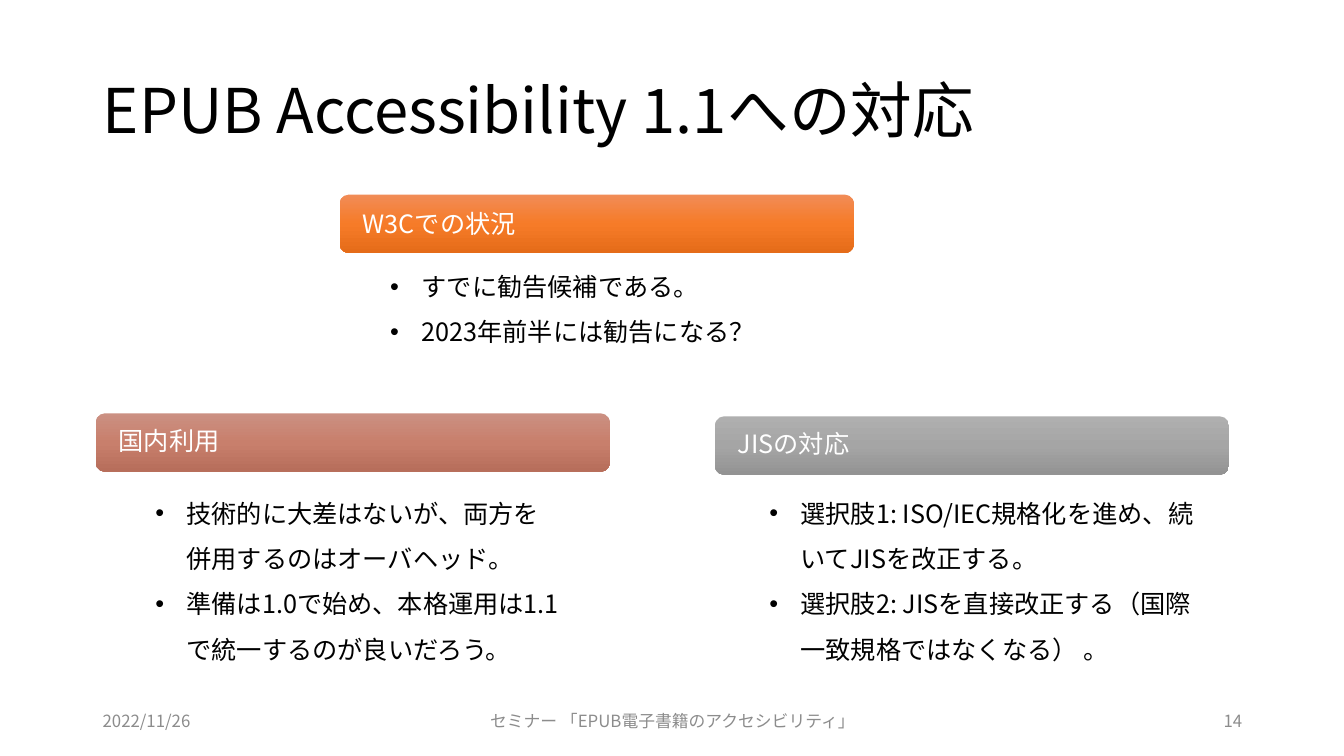
from copy import deepcopy

from lxml import etree
from pptx import Presentation
from pptx.dml.color import RGBColor
from pptx.enum import shapes, text
from pptx.oxml.ns import qn
from pptx.util import Inches, Pt

FACE = "Noto Sans CJK JP"
BLACK = RGBColor(0x00, 0x00, 0x00)
WHITE = RGBColor(0xFF, 0xFF, 0xFF)
GRAY = RGBColor(0x8C, 0x8C, 0x8C)
ORANGE = [RGBColor(0xF1, 0x8C, 0x57), RGBColor(0xF6, 0x7B, 0x28), RGBColor(0xE5, 0x6C, 0x19)]
RUST = [RGBColor(0xCB, 0x90, 0x82), RGBColor(0xC8, 0x7F, 0x6C), RGBColor(0xB7, 0x6E, 0x5B)]
SILVER = [RGBColor(0xAF, 0xAF, 0xAF), RGBColor(0xA5, 0xA5, 0xA5), RGBColor(0x93, 0x93, 0x93)]
LEFT, CENTER, RIGHT = text.PP_ALIGN.LEFT, text.PP_ALIGN.CENTER, text.PP_ALIGN.RIGHT
TOP, MIDDLE = text.MSO_ANCHOR.TOP, text.MSO_ANCHOR.MIDDLE


def place(shape, left, top, width, height):
    shape.left, shape.top = Inches(left), Inches(top)
    shape.width, shape.height = Inches(width), Inches(height)


def write(shape, lines, size, color, align=LEFT, anchor=MIDDLE, spacing=1.0):
    """Fill the shape with one paragraph per line and return the paragraphs."""
    frame = shape.text_frame
    frame.text = "\n".join(lines)
    frame.word_wrap = True
    frame.auto_size = text.MSO_AUTO_SIZE.NONE
    frame.vertical_anchor = anchor
    for para in frame.paragraphs:
        para.alignment = align
        para.line_spacing = spacing
        para.space_before = para.space_after = Pt(0)
        font = para.font
        font.size, font.bold, font.name = Pt(size), False, FACE
        font.color.rgb = color
        props = para._p.pPr.find(qn("a:defRPr"))
        etree.SubElement(props, qn("a:ea"), typeface=FACE)
    return frame.paragraphs


def shade(shape, colors):
    """Apply an even gradient that runs from top to bottom."""
    fill = shape.fill
    fill.gradient()
    fill.gradient_angle = 270
    first = fill._fill._gradFill.gsLst[0]
    first.addnext(deepcopy(first))
    for i, (stop, color) in enumerate(zip(fill.gradient_stops, colors)):
        stop.color.rgb = color
        stop.position = i / (len(colors) - 1)


def banner(slide, left, top, label, colors, spacing):
    shape = slide.shapes.add_shape(
        shapes.MSO_SHAPE.ROUNDED_RECTANGLE,
        Inches(left), Inches(top), Inches(5.1), Inches(0.58))
    shape.adjustments[0] = 0.16
    shape.shadow.inherit = False
    shape.line.fill.background()
    shade(shape, colors)
    write(shape, [label], 18, WHITE, spacing=spacing)
    frame = shape.text_frame
    frame.margin_left = frame.margin_right = Inches(0.2)
    frame.margin_top = frame.margin_bottom = 0


def bullets(holder, box, lines):
    place(holder, *box)
    for para in write(holder, lines, 18, BLACK, anchor=TOP, spacing=1.5):
        props = para._p.pPr
        props.set("marL", str(Inches(0.31)))
        props.set("indent", str(-Inches(0.31)))
        face = etree.Element(qn("a:buFont"), typeface="Arial")
        mark = etree.Element(qn("a:buChar"), char="•")
        font = props.find(qn("a:defRPr"))
        font.addprevious(face)
        font.addprevious(mark)


def footer(slide, left, width, label, align):
    box = slide.shapes.add_textbox(
        Inches(left), Inches(6.95), Inches(width), Inches(0.4))
    write(box, [label], 12, GRAY, align)


def main():
    deck = Presentation()
    deck.slide_width, deck.slide_height = Inches(13.33), Inches(7.5)
    slide = deck.slides.add_slide(deck.slide_layouts.get_by_name("Comparison"))
    title, *bodies = slide.placeholders

    place(title, 0.92, 0.4, 11.5, 1.45)
    write(title, ["EPUB Accessibility 1.1への対応"], 44, BLACK, spacing=0.9)

    topics = [
        ("W3Cでの状況", ORANGE, (3.37, 1.93), 1.0, (3.77, 2.49, 3.86, 1.5),
         ["すでに勧告候補である。", "2023年前半には勧告になる？"]),
        ("国内利用", RUST, (0.95, 4.1), 0.9, (1.44, 4.74, 4.25, 1.88),
         ["技術的に大差はないが、両方を併用するのはオーバヘッド。",
          "準備は1.0で始め、本格運用は1.1で統一するのが良いだろう。"]),
        ("JISの対応", SILVER, (7.09, 4.13), 0.9, (7.53, 4.74, 4.45, 1.88),
         ["選択肢1: ISO/IEC規格化を進め、続いてJISを改正する。",
          "選択肢2: JISを直接改正する（国際一致規格ではなくなる） 。"]),
    ]
    for holder, (label, colors, spot, spacing, box, lines) in zip(bodies, topics):
        banner(slide, *spot, label, colors, spacing)
        bullets(holder, box, lines)
    for spare in bodies[len(topics):]:
        spare.element.getparent().remove(spare.element)

    footer(slide, 0.92, 3, "2022/11/26", LEFT)
    footer(slide, 4.42, 4.5, "セミナー 「EPUB電子書籍のアクセシビリティ」", CENTER)
    footer(slide, 9.42, 3, "14", RIGHT)
    deck.save("out.pptx")


if __name__ == "__main__":
    main()
